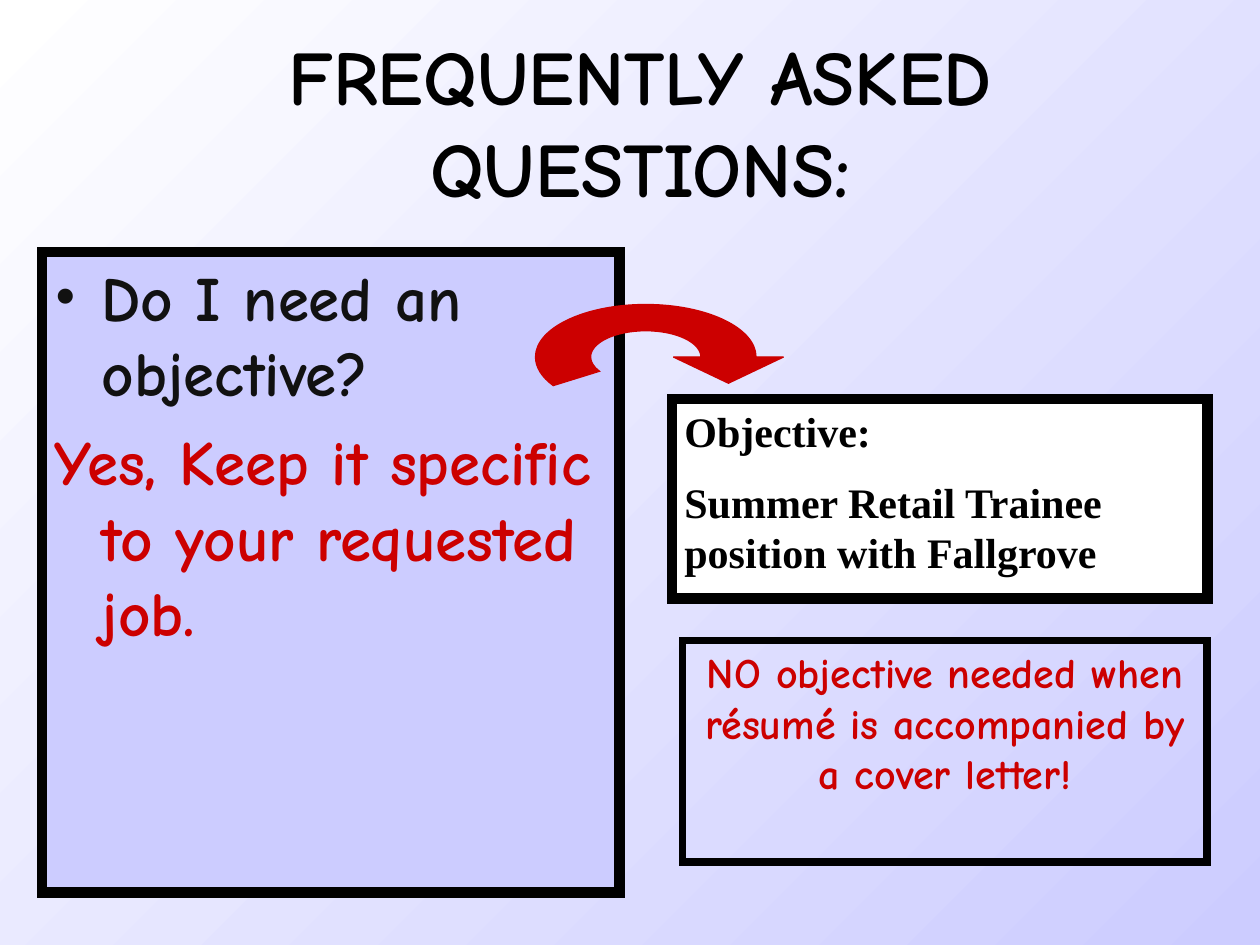
from dataclasses import dataclass
from math import cos, radians, sin, tan

from lxml import etree
from pptx import Presentation
from pptx.dml.color import RGBColor
from pptx.enum.shapes import MSO_SHAPE
from pptx.enum.text import MSO_ANCHOR, MSO_AUTO_SIZE, PP_ALIGN
from pptx.oxml.ns import qn
from pptx.util import Inches, Pt

RECTANGLE = MSO_SHAPE.RECTANGLE
LEFT, CENTER = PP_ALIGN.LEFT, PP_ALIGN.CENTER
TOP, MIDDLE = MSO_ANCHOR.TOP, MSO_ANCHOR.MIDDLE
NO_AUTOFIT = MSO_AUTO_SIZE.NONE
TITLE_ONLY = 5
COLUMNS, ROWS = 120, 90
CELL = Inches(10) / COLUMNS

Point = tuple[float, float]


@dataclass(frozen=True)
class Theme:
    black: str = "000000"
    ink: str = "111111"
    white: str = "FFFFFF"
    lavender: str = "CCCCFF"
    red: str = "CC0000"
    hand: str = "Comic Neue"
    serif: str = "Times New Roman"
    title_size: int = 44
    question_size: int = 36
    note_size: int = 24


THEME = Theme()


@dataclass(frozen=True)
class Area:
    """A rectangle in grid columns and rows."""
    column: float
    row: float
    columns: float
    rows: float

    def lengths(self) -> list[int]:
        return [grid(n) for n in (self.column, self.row, self.columns, self.rows)]


@dataclass(frozen=True)
class Line:
    text: str
    color: str
    bullet: bool = False


@dataclass(frozen=True)
class Panel:
    area: Area
    lines: tuple[Line, ...]
    font: str
    size: int
    border: float
    space_before: float
    fill: str | None = None
    align: PP_ALIGN = LEFT
    hanging: float = 0


PANELS = (
    Panel(Area(4, 24, 55, 61),
          (Line("Do I need an objective?", THEME.ink, bullet=True),
           Line("Yes, Keep it specific to your requested job.", THEME.red)),
          THEME.hand, THEME.question_size, border=6, space_before=7.5,
          fill=THEME.lavender, hanging=4.5),
    Panel(Area(64, 38, 51, 19),
          (Line("Objective:", THEME.black),
           Line("Summer Retail Trainee position with Fallgrove", THEME.black)),
          THEME.serif, THEME.note_size, border=6, space_before=12,
          fill=THEME.white),
    Panel(Area(65, 61, 50, 21.12),
          (Line("NO objective needed when résumé is accompanied by a cover letter!",
                THEME.red),),
          THEME.hand, THEME.note_size, border=4.5, space_before=12, align=CENTER),
)


def grid(cells: float) -> int:
    return round(cells * CELL)


def rgb(color: str) -> RGBColor:
    return RGBColor.from_string(color)


def format_runs(paragraph, font: str, size: int, color: str) -> None:
    for run in paragraph.runs:
        run.font.name, run.font.size, run.font.bold = font, Pt(size), True
        run.font.color.rgb = rgb(color)


def hang_indent(paragraph, indent: int, bullet: bool) -> None:
    properties = paragraph._p.get_or_add_pPr()
    properties.set("marL", str(indent))
    properties.set("indent", str(-indent))
    if bullet:
        etree.SubElement(properties, qn("a:buFont")).set("typeface", THEME.serif)
        etree.SubElement(properties, qn("a:buChar")).set("char", "•")


def outline_in(shape, color: str, width: float) -> None:
    """Give the shape a line with sharp corners."""
    shape.line.color.rgb = rgb(color)
    shape.line.width = Pt(width)
    join = etree.SubElement(shape.line._get_or_add_ln(), qn("a:miter"))
    join.set("lim", "800000")


def paint_background(slide) -> None:
    fill = slide.background.fill
    fill.gradient()
    fill.gradient_angle = 315
    for stop, color in zip(fill.gradient_stops, (THEME.white, THEME.lavender)):
        stop.color.rgb = rgb(color)


def write_title(slide, text: str, area: Area) -> None:
    title = slide.shapes.title
    title.left, title.top, title.width, title.height = area.lengths()
    frame = title.text_frame
    frame.text = text
    frame.auto_size, frame.vertical_anchor = NO_AUTOFIT, MIDDLE
    heading = frame.paragraphs[0]
    heading.alignment = CENTER
    format_runs(heading, THEME.hand, THEME.title_size, THEME.black)


def draw_panel(slide, panel: Panel) -> None:
    box = slide.shapes.add_shape(RECTANGLE, *panel.area.lengths())
    box.shadow.inherit = False
    if panel.fill:
        box.fill.solid()
        box.fill.fore_color.rgb = rgb(panel.fill)
    else:
        box.fill.background()
    outline_in(box, THEME.black, panel.border)
    frame = box.text_frame
    frame.word_wrap, frame.vertical_anchor = True, TOP
    frame.text = "\n".join(line.text for line in panel.lines)
    for paragraph, line in zip(frame.paragraphs, panel.lines):
        paragraph.alignment = panel.align
        paragraph.space_before = Pt(panel.space_before)
        format_runs(paragraph, panel.font, panel.size, line.color)
        if panel.hanging:
            hang_indent(paragraph, grid(panel.hanging), line.bullet)


def bezier_arc(center: Point, radii: Point, start: float, end: float) -> list[Point]:
    """Return two control points and the end point of an elliptical arc."""
    a, b = radians(start), radians(end)
    pull = 4 / 3 * tan((b - a) / 4)
    unit = [(cos(a) - pull * sin(a), sin(a) + pull * cos(a)),
            (cos(b) + pull * sin(b), sin(b) - pull * cos(b)),
            (cos(b), sin(b))]
    return [(center[0] + radii[0] * x, center[1] - radii[1] * y) for x, y in unit]


def bend_segments(shape, first: int, curves: int) -> None:
    """Turn each three straight segments from the first one into a curve."""
    segments = list(shape._element.iter(qn("a:lnTo")))
    for start in range(first, first + 3 * curves, 3):
        triple = segments[start:start + 3]
        curve = etree.Element(qn("a:cubicBezTo"))
        triple[0].addprevious(curve)
        for segment in triple:
            curve.append(segment[0])
            segment.getparent().remove(segment)


def draw_curved_arrow(slide, column: float, row: float, width: float, height: float) -> None:
    """Draw an arched arrow; column and row give the centre of its arch."""
    step, center = width / 8, (column, row)
    inner, outer = (2 * step, height / 2), (4 * step, height)
    angles = (0, 90, 180, 213)
    inner_arcs = [bezier_arc(center, inner, a, b) for a, b in zip(angles, angles[1:])]
    back = angles[::-1]
    outer_arcs = [bezier_arc(center, outer, a, b) for a, b in zip(back, back[1:])]
    tail = (column + outer[0] * cos(radians(back[0])),
            row - outer[1] * sin(radians(back[0])))
    head = [(column + 5 * step, row), (column + 3 * step, row + height / 2),
            (column + step, row)]
    outline = [*sum(inner_arcs, []), tail, *sum(outer_arcs, []), *head]
    builder = slide.shapes.build_freeform(grid(column + inner[0]), grid(row))
    builder.add_line_segments([(grid(x), grid(y)) for x, y in outline], close=True)
    arrow = builder.convert_to_shape()
    bend_segments(arrow, 3 * len(inner_arcs) + 1, len(outer_arcs))
    bend_segments(arrow, 0, len(inner_arcs))
    arrow.shadow.inherit = False
    arrow.fill.solid()
    arrow.fill.fore_color.rgb = rgb(THEME.red)
    outline_in(arrow, THEME.red, 0.75)


def main() -> None:
    deck = Presentation()
    deck.slide_width, deck.slide_height = grid(COLUMNS), grid(ROWS)
    slide = deck.slides.add_slide(deck.slide_layouts[TITLE_ONLY])
    paint_background(slide)
    write_title(slide, "FREQUENTLY ASKED QUESTIONS:", Area(10, 4, 102, 15))
    for panel in PANELS:
        draw_panel(slide, panel)
    draw_curved_arrow(slide, column=61.5, row=34, width=21, height=5)
    deck.save("out.pptx")


if __name__ == "__main__":
    main()
